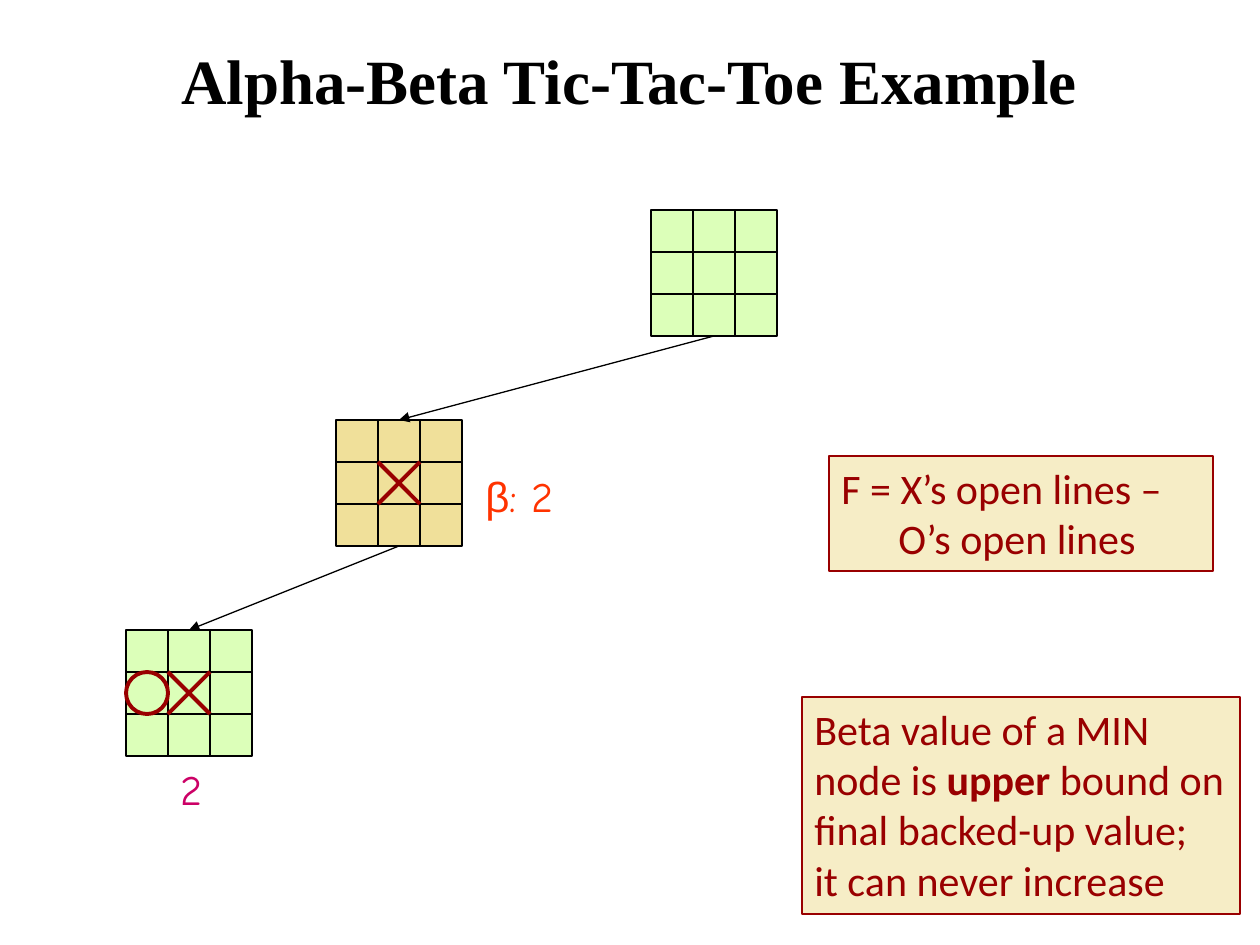
from lxml import etree
from pptx import Presentation
from pptx import util as u
from pptx.dml.color import RGBColor
from pptx.enum import shapes, text
from pptx.oxml.ns import qn

PX = 914400 / 126
SIDE, CELL = 126, 42
COLORS = {"black": "000000", "max": "DCFFB9", "min": "F0E09A", "note": "F6EDC6",
          "mark": "990000", "beta": "FF3300", "score": "CC0066"}


def px(*lengths):
    """Turn pixel lengths into EMU."""
    return [u.Emu(round(length * PX)) for length in lengths]


def rgb(name):
    """Look up a named colour."""
    return RGBColor.from_string(COLORS[name])


def style_line(item, color, width):
    """Set the outline colour and point width."""
    item.line.color.rgb = rgb(color)
    item.line.width = u.Pt(width)


def add_line(page, start, end, color="black", width=0.75, arrow=False):
    """Draw a straight line, with an arrowhead at its end if asked."""
    line = page.shapes.add_connector(shapes.MSO_CONNECTOR.STRAIGHT, *px(*start, *end))
    style_line(line, color, width)
    etree.SubElement(line._element.spPr, qn("a:effectLst"))
    if arrow:
        etree.SubElement(line.line._get_or_add_ln(), qn("a:tailEnd"), type="triangle")


def add_outline(page, kind, box, fill, color, width=0.75):
    """Draw a preset shape, unfilled when fill is None."""
    shape = page.shapes.add_shape(kind, *px(*box))
    shape.shadow.inherit = False
    if fill:
        shape.fill.solid()
        shape.fill.fore_color.rgb = rgb(fill)
    else:
        shape.fill.background()
    style_line(shape, color, width)
    return shape


def add_span(para, words, color, name, size=24, bold=False):
    """Append one formatted run to a paragraph."""
    span = para.add_run()
    span.text = words
    for key, value in {"name": name, "size": u.Pt(size), "bold": bold}.items():
        setattr(span.font, key, value)
    span.font.color.rgb = rgb(color)


def set_frame(frame, wrap):
    """Left-align a text frame at its top and size it to its text."""
    for key, value in {"word_wrap": wrap, "vertical_anchor": text.MSO_ANCHOR.TOP,
                       "auto_size": text.MSO_AUTO_SIZE.SHAPE_TO_FIT_TEXT}.items():
        setattr(frame, key, value)
    frame.paragraphs[0].alignment = text.PP_ALIGN.LEFT


def add_title(page, box, words):
    """Place and format the title placeholder."""
    title = page.shapes.title
    for key, value in zip(("left", "top", "width", "height"), px(*box)):
        setattr(title, key, value)
    title.text_frame.vertical_anchor = text.MSO_ANCHOR.MIDDLE
    para = title.text_frame.paragraphs[0]
    para.alignment = text.PP_ALIGN.CENTER
    add_span(para, words, "black", "Times New Roman", 36, True)


def add_board(page, left, top, fill, marks=()):
    """Draw a tic-tac-toe board with marks given as (symbol, column, row)."""
    rect, oval = shapes.MSO_SHAPE.RECTANGLE, shapes.MSO_SHAPE.OVAL
    add_outline(page, rect, (left, top, SIDE, SIDE), fill, "black")
    for step in (CELL, 2 * CELL):
        add_line(page, (left + step, top), (left + step, top + SIDE))
        add_line(page, (left, top + step), (left + SIDE, top + step))
    for symbol, column, row in marks:
        x, y = left + column * CELL, top + row * CELL
        if symbol == "O":
            add_outline(page, oval, (x, y, CELL, CELL), None, "mark", 2.25)
        else:
            add_line(page, (x, y), (x + CELL, y + CELL), "mark", 2.25)
            add_line(page, (x, y + CELL), (x + CELL, y), "mark", 2.25)


def add_label(page, box, spans, color):
    """Add a node value made of (words, font) spans."""
    frame = page.shapes.add_textbox(*px(*box)).text_frame
    set_frame(frame, False)
    for words, name in spans:
        add_span(frame.paragraphs[0], words, color, name)


def add_note(page, box, lines, wrap, indent=0):
    """Add a note box; lines hold (words, bold) spans, later ones indented."""
    frame = add_outline(page, shapes.MSO_SHAPE.RECTANGLE, box, "note", "mark").text_frame
    set_frame(frame, wrap)
    for index, spans in enumerate(lines):
        para = frame.add_paragraph() if index else frame.paragraphs[0]
        para.alignment = text.PP_ALIGN.LEFT
        if index and indent:
            para._p.get_or_add_pPr().set("marL", str(px(indent)[0]))
        for words, bold in spans:
            add_span(para, words, "mark", "Calibri", bold=bold)


def main():
    """Build the slide and save it."""
    deck = Presentation()
    deck.slide_width, deck.slide_height = u.Inches(10), u.Inches(7.5)
    page = deck.slides.add_slide(deck.slide_layouts[5])
    add_title(page, (94, 0, 1071, 158), "Alpha-Beta Tic-Tac-Toe Example")

    cross = ("X", 1, 1)
    nodes = [(651, 210, "max", ()), (336, 420, "min", (cross,)),
             (126, 630, "max", (cross, ("O", 0, 1)))]
    for node in nodes:
        add_board(page, *node)
    for parent, child in zip(nodes, nodes[1:]):
        add_line(page, (parent[0] + SIDE // 2, parent[1] + SIDE),
                 (child[0] + SIDE // 2, child[1]), arrow=True)

    add_label(page, (473, 464, 100, 63), [("β", "Arial"), (": 2", "Comic Neue")], "beta")
    add_label(page, (168, 757, 50, 63), [("2", "Comic Neue")], "score")
    add_note(page, (829, 456, 384, 115),
             [[("F = X’s open lines –", False)], [("O’s open lines", False)]], True, 57)
    add_note(page, (802, 697, 438, 217),
             [[("Beta value of a MIN", False)],
              [("node is ", False), ("upper", True), (" bound on", False)],
              [("final backed-up value;", False)],
              [("it can never increase", False)]], False)
    deck.save("out.pptx")


if __name__ == "__main__":
    main()
